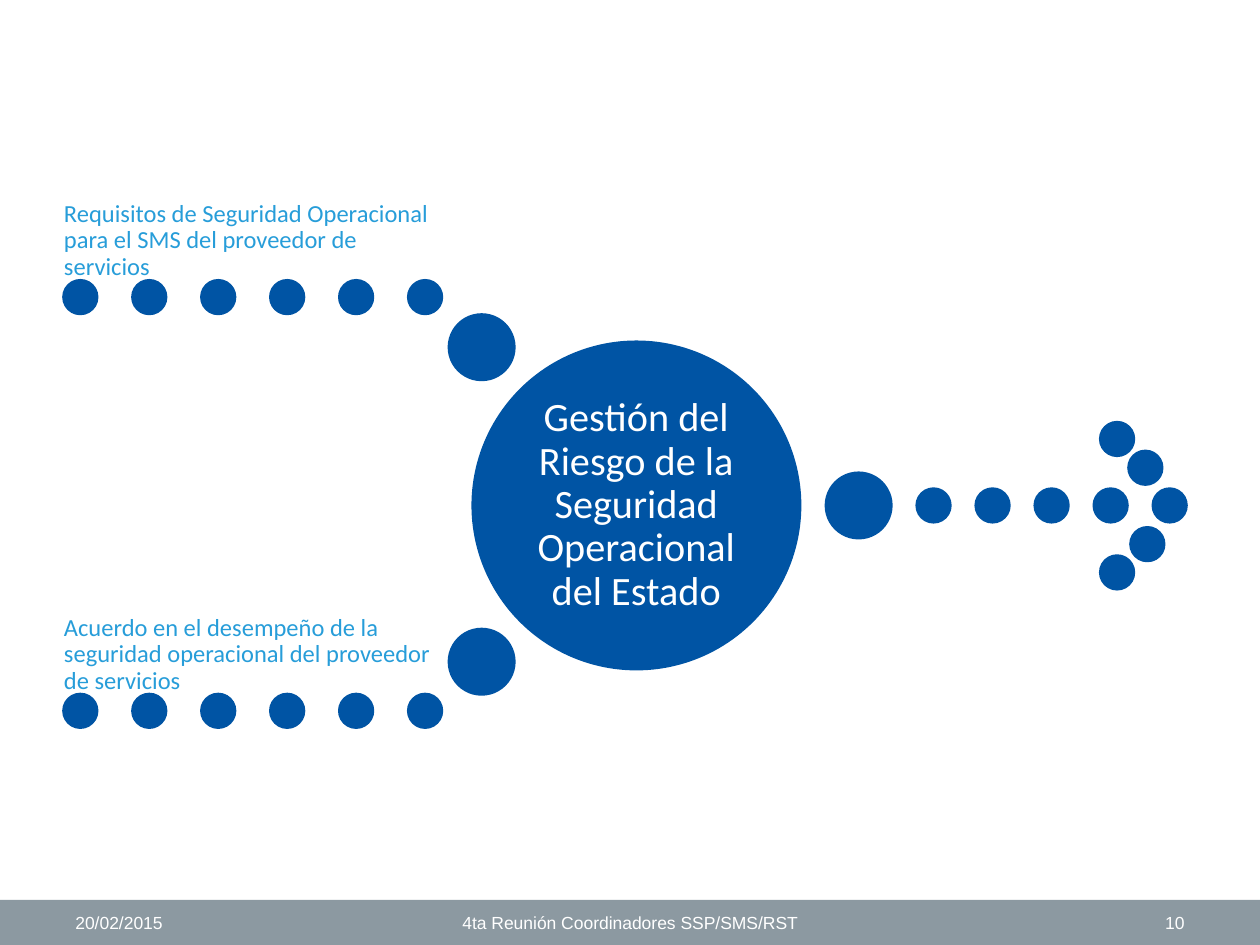
from pptx import Presentation
from pptx.dml.color import RGBColor
from pptx.enum.shapes import MSO_SHAPE as Shape
from pptx.enum.text import MSO_ANCHOR as Anchor, PP_ALIGN as Align
from pptx.util import Cm, Pt

THEME = {
    "dot": RGBColor.from_string("0054A4"),
    "label": RGBColor.from_string("279DD9"),
    "bar": RGBColor.from_string("8C99A1"),
    "white": RGBColor.from_string("FFFFFF"),
    "body_font": "Calibri", "footer_font": "Arial",
    "core_size": 23, "label_size": 14, "footer_size": 10,
}

# Lengths in centimetres; circles are placed by their centres
SMALL, MEDIUM, LARGE = 0.66, 1.3, 6.58
CORE_X, CORE_Y = 12.83, 10.19
CORE_TEXT = "Gestión del Riesgo de la Seguridad Operacional del Estado"
CORE_TEXT_SIZE = 4.65
INPUTS = [  # label, row height, height of the medium dot
    ("Requisitos de Seguridad Operacional para el SMS del proveedor de servicios", 5.99, 7.0),
    ("Acuerdo en el desempeño de la seguridad operacional del proveedor de servicios", 14.33, 13.34),
]
INPUT_X, INPUT_STEP, INPUT_COUNT, JOINT_X = 1.62, 1.39, 6, 9.71
LABEL_WIDTH, LABEL_HEIGHT = 7.6, 1.68
OUTPUT_X, OUTPUT_STEP, OUTPUT_COUNT, OUTPUT_JOINT_X = 18.82, 1.19, 5, 17.31
ARROW_HEAD = [(22.52, 8.85), (22.52, 11.54), (23.09, 9.43), (23.13, 10.97)]
FOOTER_TOP, FOOTER_HEIGHT = 18.14, 0.91
FOOTER = [  # text, left, width, alignment
    ("20/02/2015", 1.27, 5.93, Align.LEFT),
    ("4ta Reunión Coordinadores SSP/SMS/RST", 8.68, 8.04, Align.CENTER),
    ("10", 18.2, 5.93, Align.RIGHT),
]


def add_filled(page, kind, left, top, width, height, color):
    shape = page.shapes.add_shape(kind, Cm(left), Cm(top), Cm(width), Cm(height))
    shape.shadow.inherit = False
    shape.fill.solid()
    shape.fill.fore_color.rgb = color
    return shape


def add_dot(page, x, y, size):
    """Draw a circle centred on x, y."""
    dot = add_filled(page, Shape.OVAL, x - size / 2, y - size / 2, size, size, THEME["dot"])
    dot.line.color.rgb = THEME["dot"]
    dot.line.width = Pt(2)


def add_text(page, text, left, top, width, height, anchor, inset, para_format, font_format):
    box = page.shapes.add_textbox(Cm(left), Cm(top), Cm(width), Cm(height))
    frame = box.text_frame
    frame.word_wrap = True
    frame.vertical_anchor = anchor
    if inset is not None:
        for side in ("left", "right", "top", "bottom"):
            setattr(frame, f"margin_{side}", Cm(inset))
    para = frame.paragraphs[0]
    for name, value in para_format.items():
        setattr(para, name, value)
    span = para.add_run()
    span.text = text
    color, font, size = font_format
    span.font.color.rgb = THEME[color]
    span.font.name = THEME[font]
    span.font.size = Pt(THEME[size])


def add_output(page):
    for index in range(OUTPUT_COUNT):
        add_dot(page, OUTPUT_X + index * OUTPUT_STEP, CORE_Y, SMALL)
    add_dot(page, OUTPUT_JOINT_X, CORE_Y, MEDIUM)
    for x, y in ARROW_HEAD:
        add_dot(page, x, y, SMALL)


def add_core(page):
    add_dot(page, CORE_X, CORE_Y, LARGE)
    half = CORE_TEXT_SIZE / 2
    add_text(page, CORE_TEXT, CORE_X - half, CORE_Y - half, CORE_TEXT_SIZE, CORE_TEXT_SIZE,
             Anchor.MIDDLE, 0.08, {"alignment": Align.CENTER, "line_spacing": 0.9},
             ("white", "body_font", "core_size"))


def add_inputs(page):
    for label, row_y, joint_y in INPUTS:
        add_dot(page, JOINT_X, joint_y, MEDIUM)
        for index in range(INPUT_COUNT):
            add_dot(page, INPUT_X + index * INPUT_STEP, row_y, SMALL)
        add_text(page, label, INPUT_X - SMALL / 2, row_y - SMALL / 2 - LABEL_HEIGHT,
                 LABEL_WIDTH, LABEL_HEIGHT, Anchor.BOTTOM, 0,
                 {"alignment": Align.LEFT, "line_spacing": 0.9},
                 ("label", "body_font", "label_size"))


def add_footer(page):
    bar = add_filled(page, Shape.RECTANGLE, 0, FOOTER_TOP, 25.4, FOOTER_HEIGHT, THEME["bar"])
    bar.line.fill.background()
    for text, left, width, alignment in FOOTER:
        add_text(page, text, left, FOOTER_TOP, width, FOOTER_HEIGHT, Anchor.MIDDLE, None,
                 {"alignment": alignment}, ("white", "footer_font", "footer_size"))


def main():
    deck = Presentation()
    deck.slide_width, deck.slide_height = Cm(25.4), Cm(19.05)
    page = deck.slides.add_slide(deck.slide_layouts[6])
    for add_part in (add_output, add_core, add_inputs, add_footer):
        add_part(page)
    deck.save("out.pptx")


if __name__ == "__main__":
    main()
